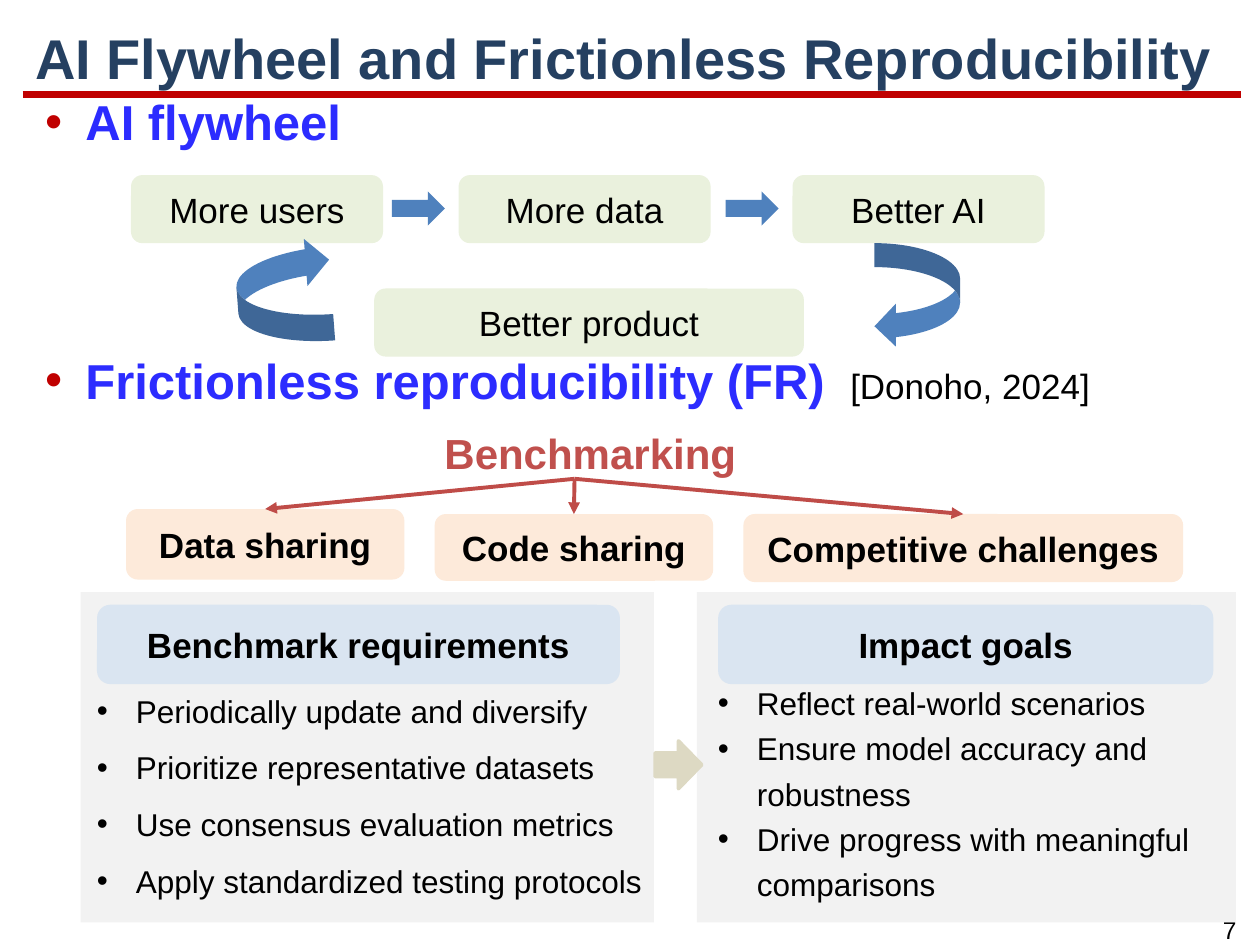
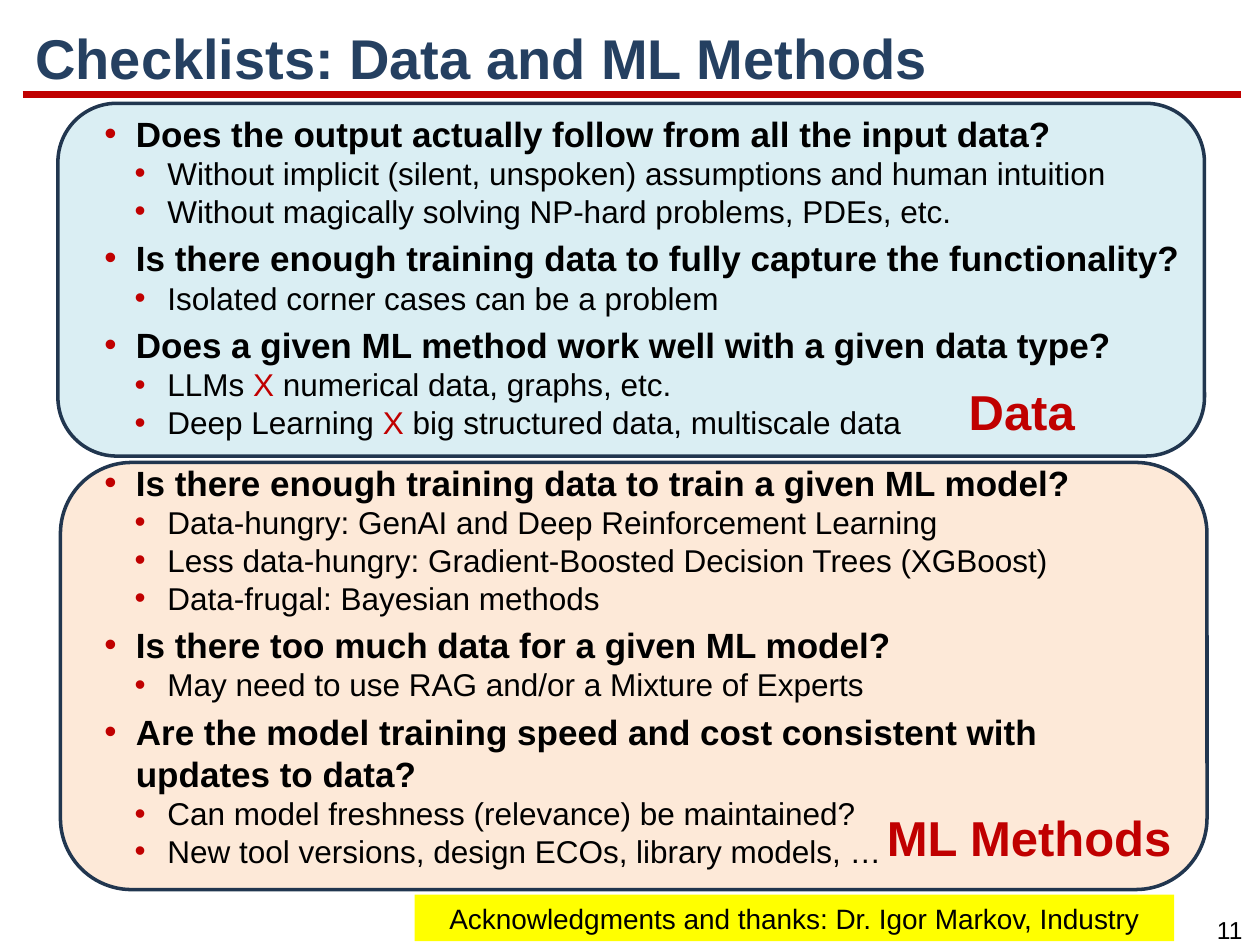
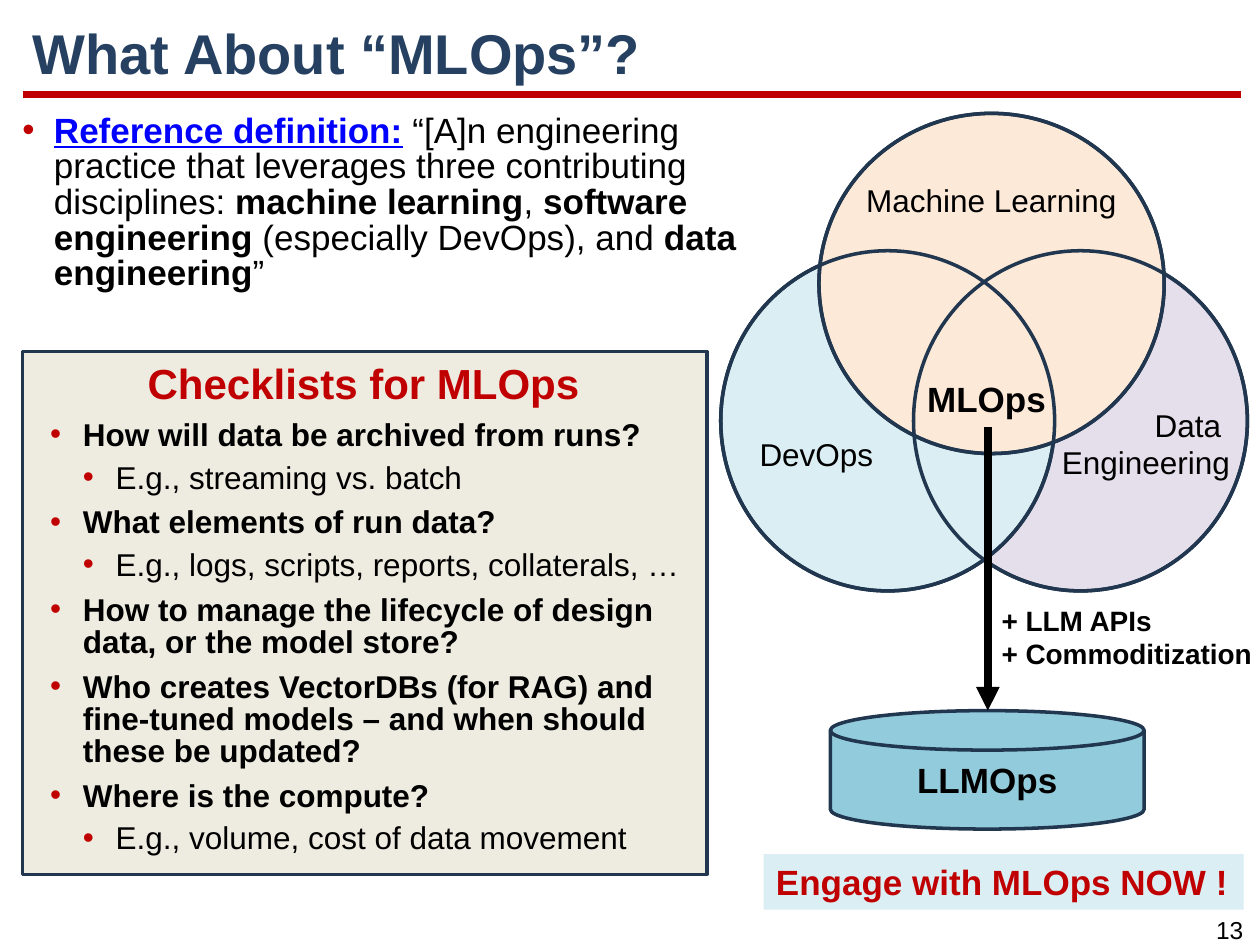
from lxml import etree
from pptx import Presentation
from pptx.dml.color import RGBColor
from pptx.enum.shapes import MSO_CONNECTOR, MSO_SHAPE
from pptx.enum.text import MSO_ANCHOR, MSO_AUTO_SIZE, PP_ALIGN
from pptx.oxml.ns import qn
from pptx.util import Inches, Pt

FONT = "Arial"
BLACK = RGBColor(0x00, 0x00, 0x00)
RED = RGBColor(0xC0, 0x00, 0x00)
TITLE_NAVY = RGBColor(0x25, 0x40, 0x61)
OUTLINE = RGBColor(0x21, 0x36, 0x4F)
HEADING_BLUE = RGBColor(0x2C, 0x2C, 0xFF)
LINK_BLUE = RGBColor(0x00, 0x00, 0xFF)
ARROW_BLUE = RGBColor(0x4F, 0x81, 0xBD)
PALE_GREEN = RGBColor(0xEA, 0xF1, 0xDD)
PALE_BLUE = RGBColor(0xDA, 0xE5, 0xF1)
PALE_AQUA = RGBColor(0xDA, 0xEE, 0xF3)
PALE_ORANGE = RGBColor(0xFD, 0xEA, 0xDA)
PEACH = RGBColor(0xFD, 0xE9, 0xD8)
LAVENDER = RGBColor(0xE5, 0xDF, 0xEC)
DISK_AQUA = RGBColor(0x92, 0xCC, 0xDC)
PANEL_GREY = RGBColor(0xF2, 0xF2, 0xF2)
CREAM = RGBColor(0xEE, 0xEC, 0xE1)
TAN = RGBColor(0xDD, 0xD9, 0xC3)
BRICK = RGBColor(0xC0, 0x50, 0x4D)
BRICK_LINE = RGBColor(0xBF, 0x4C, 0x48)
YELLOW = RGBColor(0xFF, 0xFF, 0x00)

LEFT, CENTER, RIGHT = PP_ALIGN.LEFT, PP_ALIGN.CENTER, PP_ALIGN.RIGHT
MIDDLE, TOP = MSO_ANCHOR.MIDDLE, MSO_ANCHOR.TOP
RECT, ROUND_RECT = MSO_SHAPE.RECTANGLE, MSO_SHAPE.ROUNDED_RECTANGLE
ELLIPSE, DISK = MSO_SHAPE.OVAL, MSO_SHAPE.FLOWCHART_MAGNETIC_DISK
RIGHT_ARROW, CURVED_ARROW = MSO_SHAPE.RIGHT_ARROW, MSO_SHAPE.CURVED_LEFT_ARROW

HEADING = dict(size=28, bold=True, color=HEADING_BLUE, bullet=RED, indent=(0.38, -0.32))
QUESTION = dict(size=20, bold=True, bullet=RED, indent=(0.25, -0.25), before=4)
DETAIL = dict(size=18, bullet=RED, indent=(0.5, -0.26))
OPS_QUESTION = dict(size=18, bold=True, bullet=RED, indent=(0.5, -0.26), before=7.2, spacing=0.85)
OPS_DETAIL = dict(size=18, bullet=RED, indent=(0.76, -0.26), before=6, spacing=0.85)


def add_text(tf, text, size=18, bold=False, color=BLACK, align=LEFT, underline=None,
             bullet=None, indent=None, before=0, spacing=None):
    """Add a paragraph; text is a string or a list of (string, run overrides)."""
    first = len(tf.paragraphs) == 1 and not tf.paragraphs[0].runs
    p = tf.paragraphs[0] if first else tf.add_paragraph()
    if bullet is not None:
        set_bullet(p, bullet, *indent)
    p.alignment = align
    p.space_before = Pt(0 if first else before)
    if spacing:
        p.line_spacing = spacing
    base = dict(size=size, bold=bold, color=color, underline=underline)
    for words, changes in [(text, {})] if isinstance(text, str) else text:
        look = {**base, **changes}
        r = p.add_run()
        r.text = words
        r.font.name = FONT
        r.font.size = Pt(look["size"])
        r.font.bold = look["bold"]
        r.font.underline = look["underline"]
        r.font.color.rgb = look["color"]


def set_bullet(p, color, margin, hanging):
    pPr = p._p.get_or_add_pPr()
    pPr.set("marL", str(Inches(margin)))
    pPr.set("indent", str(Inches(hanging)))
    clr = etree.SubElement(pPr, qn("a:buClr"))
    etree.SubElement(clr, qn("a:srgbClr")).set("val", str(color))
    etree.SubElement(pPr, qn("a:buFont")).set("typeface", FONT)
    etree.SubElement(pPr, qn("a:buChar")).set("char", "•")


def add_box(s, x, y, w, h, paragraphs, **fmt):
    """Add a text box; paragraphs is a list of (text, own format)."""
    tf = s.shapes.add_textbox(Inches(x), Inches(y), Inches(w), Inches(h)).text_frame
    tf.word_wrap = True
    for text, own in paragraphs:
        add_text(tf, text, **{**fmt, **own})


def add_label(s, x, y, w, h, text, **fmt):
    add_box(s, x, y, w, h, [(text, fmt)])


def add_shape(s, kind, x, y, w, h, fill=None, line=None, text=None, anchor=MIDDLE, **fmt):
    sp = s.shapes.add_shape(kind, Inches(x), Inches(y), Inches(w), Inches(h))
    sp.shadow.inherit = False
    if fill is None:
        sp.fill.background()
    else:
        sp.fill.solid()
        sp.fill.fore_color.rgb = fill
    if line is None:
        sp.line.fill.background()
    else:
        sp.line.color.rgb = line
        sp.line.width = Pt(2)
    if text:
        sp.text_frame.word_wrap = True
        sp.text_frame.vertical_anchor = anchor
        add_text(sp.text_frame, text, **{"size": 20, "align": CENTER, **fmt})
    return sp


def add_line(s, x1, y1, x2, y2, color, width, arrow=False):
    cxn = s.shapes.add_connector(MSO_CONNECTOR.STRAIGHT, Inches(x1), Inches(y1),
                                 Inches(x2), Inches(y2))
    cxn.line.color.rgb = color
    cxn.line.width = Pt(width)
    if arrow:
        etree.SubElement(cxn.line._get_or_add_ln(), qn("a:tailEnd")).set("type", "triangle")
    etree.SubElement(cxn._element.spPr, qn("a:effectLst"))
    return cxn


def add_slide(prs, title, number, x=0.18, y=0.16):
    """Add a slide with the shared title style, red rule and page number."""
    s = prs.slides.add_slide(prs.slide_layouts[5])
    sp = s.shapes.title
    sp.left, sp.top, sp.width, sp.height = Inches(x), Inches(y), Inches(9.68), Inches(0.65)
    tf = sp.text_frame
    tf.auto_size = MSO_AUTO_SIZE.NONE
    tf.vertical_anchor = MIDDLE
    add_text(tf, title, size=32, bold=True, color=TITLE_NAVY, spacing=0.9)
    add_line(s, 0.18, 0.75, 9.85, 0.75, RED, 4.5)
    add_label(s, 9.54, 7.21, 0.44, 0.34, str(number), size=14, align=CENTER)
    return s


def add_flywheel(s):
    for x, y, w, text in [(1.04, 1.39, 2, "More users"), (3.64, 1.39, 2, "More data"),
                          (6.29, 1.39, 2, "Better AI"), (2.97, 2.29, 3.41, "Better product")]:
        add_shape(s, ROUND_RECT, x, y, w, 0.54, PALE_GREEN, text=text)
    for x in (3.11, 5.76):
        add_shape(s, RIGHT_ARROW, x, 1.52, 0.42, 0.27, ARROW_BLUE)
    for x, y, w, turn in [(6.94, 1.93, 0.68, 0), (1.88, 1.9, 0.75, 175.7)]:
        arrow = add_shape(s, CURVED_ARROW, x, y, w, 0.83, ARROW_BLUE)
        arrow.rotation = turn
        arrow.adjustments[0] = 0.28


def add_benchmarking(s):
    add_shape(s, ROUND_RECT, 3.33, 3.28, 2.71, 0.63, text="Benchmarking", size=24,
              bold=True, color=BRICK)
    for x, y, w, h, text in [(1, 4.04, 2.21, 0.56, "Data sharing"),
                             (3.45, 4.08, 2.21, 0.53, "Code sharing"),
                             (5.9, 4.08, 3.49, 0.54, "Competitive challenges")]:
        pillar = add_shape(s, ROUND_RECT, x, y, w, h, PALE_ORANGE, text=text, bold=True)
        add_line(s, 4.56, 3.8, x + w / 2, y, BRICK_LINE, 2.25, arrow=True).end_connect(pillar, 0)


def add_panel(s, x, w, header, header_x, header_w, text_x, text_y, text_w, spacing, items):
    add_shape(s, RECT, x, 4.7, w, 2.62, PANEL_GREY)
    add_box(s, text_x, text_y, text_w, 1.88, [(item, {}) for item in items],
            bullet=BLACK, indent=(0.31, -0.31), spacing=spacing)
    add_shape(s, ROUND_RECT, header_x, 4.8, header_w, 0.63, PALE_BLUE, text=header, bold=True)


def build_flywheel_slide(prs):
    s = add_slide(prs, "AI Flywheel and Frictionless Reproducibility", 7)
    add_label(s, 0.2, 0.68, 9.64, 0.6, "AI flywheel", **HEADING)
    add_flywheel(s)
    add_label(s, 0.2, 2.73, 6.6, 0.6, "Frictionless reproducibility (FR)", **HEADING)
    add_label(s, 6.65, 2.84, 2.3, 0.44, "[Donoho, 2024]", size=20)
    add_benchmarking(s)
    add_panel(s, 0.64, 4.55, "Benchmark requirements", 0.77, 4.15, 0.67, 5.29, 4.55, 1.5,
              ["Periodically update and diversify", "Prioritize representative datasets",
               "Use consensus evaluation metrics", "Apply standardized testing protocols"])
    add_panel(s, 5.53, 4.28, "Impact goals", 5.7, 3.93, 5.6, 5.32, 4.4, 1.2,
              ["Reflect real-world scenarios", "Ensure model accuracy and robustness",
               "Drive progress with meaningful comparisons"])
    add_shape(s, RIGHT_ARROW, 5.2, 5.88, 0.37, 0.38, TAN, TAN)


def build_checklist_slide(prs):
    s = add_slide(prs, "Checklists: Data and ML Methods", 11)
    cross = ("X", dict(color=RED))
    add_shape(s, ROUND_RECT, 0.46, 0.82, 9.1, 2.8, PALE_AQUA, OUTLINE)
    add_box(s, 0.73, 0.84, 8.85, 2.84, [
        ("Does the output actually follow from all the input data?", QUESTION),
        ("Without implicit (silent, unspoken) assumptions and human intuition", DETAIL),
        ("Without magically solving NP-hard problems, PDEs, etc.", DETAIL),
        ("Is there enough training data to fully capture the functionality?", QUESTION),
        ("Isolated corner cases can be a problem", DETAIL),
        ("Does a given ML method work well with a given data type?", QUESTION),
        ([("LLMs ", {}), cross, (" numerical data, graphs, etc.", {})], DETAIL),
        ([("Deep Learning ", {}), cross, (" big structured data, multiscale data", {})], DETAIL),
    ])
    add_shape(s, ROUND_RECT, 0.48, 3.67, 9.1, 3.39, PEACH, OUTLINE)
    add_box(s, 0.73, 3.61, 8.69, 3.37, [
        ("Is there enough training data to train a given ML model?", QUESTION),
        ("Data-hungry: GenAI and Deep Reinforcement Learning", DETAIL),
        ("Less data-hungry: Gradient-Boosted Decision Trees (XGBoost)", DETAIL),
        ("Data-frugal: Bayesian methods", DETAIL),
        ("Is there too much data for a given ML model?", QUESTION),
        ("May need to use RAG and/or a Mixture of Experts", DETAIL),
        ("Are the model training speed and cost consistent with updates to data?", QUESTION),
        ("Can model freshness (relevance) be maintained?", DETAIL),
        ("New tool versions, design ECOs, library models, …", DETAIL),
    ])
    for x, y, w, text in [(7.59, 2.98, 1.2, "Data"), (6.94, 6.36, 2.5, "ML Methods")]:
        add_label(s, x, y, w, 0.56, text, size=28, bold=True, color=RED)
    add_shape(s, RECT, 3.29, 7.1, 6.03, 0.37, YELLOW, size=16,
              text="Acknowledgments and thanks: Dr. Igor Markov, Industry")


def add_venn(s):
    circles = [(7.25, 1.99, 2.65, LAVENDER), (5.72, 1.99, 2.65, PALE_AQUA), (6.5, 0.9, 2.74, PEACH)]
    for x, y, w, fill in circles:
        add_shape(s, ELLIPSE, x, y, w, 2.7, fill, OUTLINE)
    for x, y, w, _ in circles:
        add_shape(s, ELLIPSE, x, y, w, 2.7, line=OUTLINE)
    add_label(s, 7.26, 2.95, 1.15, 0.44, "MLOps", size=20, bold=True)
    add_label(s, 5.93, 3.4, 1.16, 0.4, "DevOps")
    add_box(s, 8.31, 3.17, 1.55, 0.71, [("Data ", {}), ("Engineering", {})], align=RIGHT)
    add_label(s, 6.75, 1.39, 2.21, 0.4, "Machine Learning", align=RIGHT)


def build_mlops_slide(prs):
    s = add_slide(prs, "What About “MLOps”?", 13, x=0.16, y=0.12)
    strong = dict(bold=True)
    add_label(s, 0.08, 0.86, 5.98, 1.68, [
        ("Reference definition:", dict(bold=True, color=LINK_BLUE, underline=True)),
        (" “[A]n engineering practice that leverages three contributing disciplines: ", {}),
        ("machine learning", strong), (", ", {}), ("software engineering ", strong),
        ("(especially DevOps), and ", {}), ("data engineering", strong), ("”", {}),
    ], size=20, bullet=RED, indent=(0.25, -0.25), spacing=0.85)
    add_venn(s)
    add_shape(s, RECT, 6.06, 6.78, 3.81, 0.44, PALE_AQUA, text="Engage with MLOps NOW !",
              anchor=TOP, align=LEFT, bold=True, color=RED)
    add_shape(s, RECT, 0.18, 2.79, 5.43, 4.15, CREAM, OUTLINE)
    add_box(s, 0.06, 2.85, 5.65, 4.11, [
        ("Checklists for MLOps", dict(size=24, bold=True, color=RED, align=CENTER, spacing=0.85)),
        ("How will data be archived from runs?", OPS_QUESTION),
        ("E.g., streaming vs. batch", OPS_DETAIL),
        ("What elements of run data?", OPS_QUESTION),
        ("E.g., logs, scripts, reports, collaterals, …", OPS_DETAIL),
        ("How to manage the lifecycle of design data, or the model store?", OPS_QUESTION),
        ("Who creates VectorDBs (for RAG) and fine-tuned models – and when should these "
         "be updated?", OPS_QUESTION),
        ("Where is the compute?", OPS_QUESTION),
        ("E.g., volume, cost of data movement", OPS_DETAIL),
    ])
    add_shape(s, DISK, 6.59, 5.64, 2.49, 0.94, DISK_AQUA, OUTLINE, text="LLMOps", bold=True)
    add_line(s, 7.84, 3.39, 7.84, 5.64, BLACK, 4.5, arrow=True)
    add_box(s, 7.85, 4.74, 2.22, 0.64, [("+ LLM APIs", {}), ("+ Commoditization", {})],
            size=16, bold=True)


def main():
    prs = Presentation()
    prs.slide_width, prs.slide_height = Inches(10), Inches(7.5)
    build_flywheel_slide(prs)
    build_checklist_slide(prs)
    build_mlops_slide(prs)
    prs.save("out.pptx")


if __name__ == "__main__":
    main()
